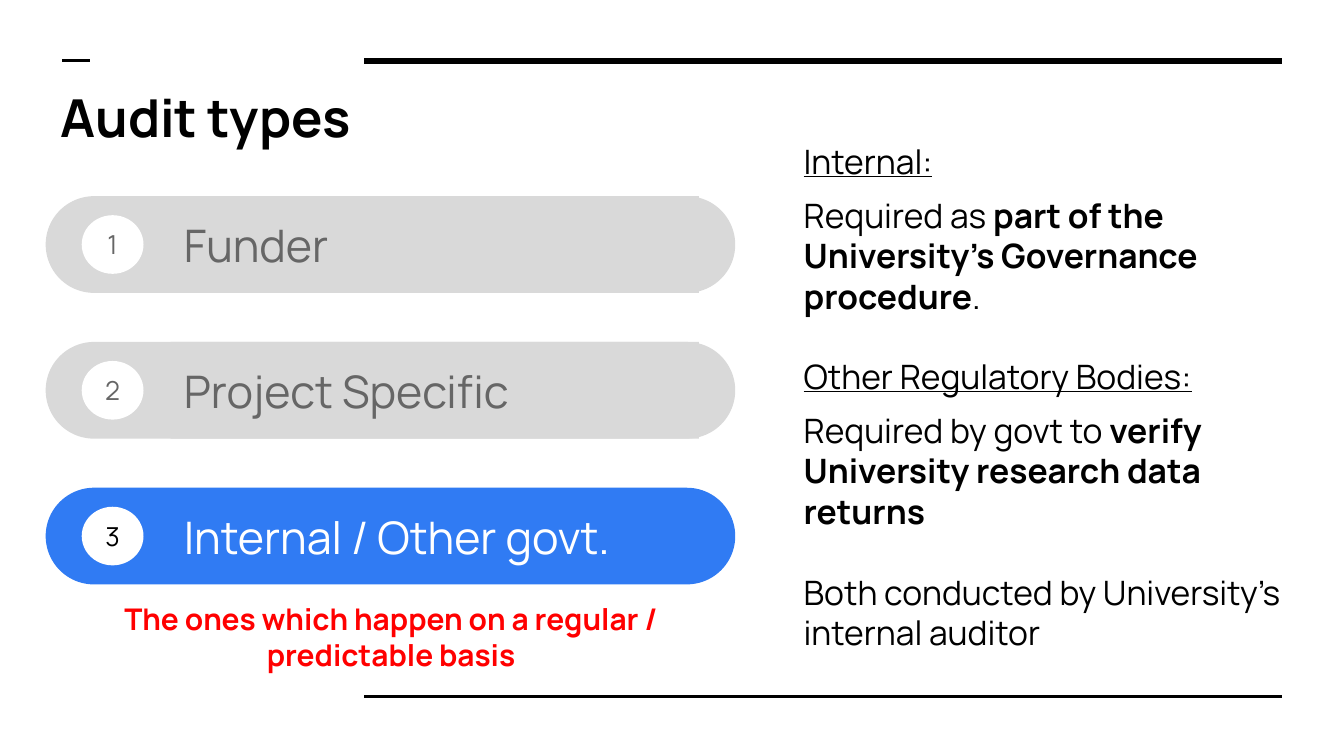
from lxml.etree import SubElement
from pptx import Presentation
from pptx.dml.color import RGBColor
from pptx.enum.shapes import MSO_CONNECTOR, MSO_SHAPE
from pptx.enum.text import MSO_ANCHOR, MSO_AUTO_SIZE, PP_ALIGN
from pptx.oxml.ns import qn
from pptx.util import Pt

FONT = "Manrope"
COLORS = {
    "black": "000000",
    "white": "FFFFFF",
    "grey": "D9D9D9",
    "muted": "666666",
    "blue": "307BF3",
    "red": "FF0000",
}

# Audit types: label, whether it is the highlighted one
AUDIT_TYPES = [("Funder", False), ("Project Specific", False), ("Internal / Other govt.", True)]
ROW_TOP, ROW_PITCH, ROW_HEIGHT = 105.1, 78.1, 51.8

# Explanation: space before, then spans of (text, bold, underline)
EXPLANATION = [
    (0, [("Internal:", False, True)]),
    (7.2, [("Required as ", False, False),
           ("part of the University’s Governance procedure", True, False),
           (".", False, False)]),
    (21.7, [("Other Regulatory Bodies:", False, True)]),
    (7.2, [("Required by govt to ", False, False),
           ("verify University research data returns", True, False)]),
    (21.7, [("Both conducted by University’s internal auditor", False, False)]),
]


def rgb(name):
    return RGBColor.from_string(COLORS[name])


def add_rule(page, left, right, y, weight):
    rule = page.shapes.add_connector(MSO_CONNECTOR.STRAIGHT, Pt(left), Pt(y), Pt(right), Pt(y))
    rule.line.color.rgb = rgb("black")
    rule.line.width = Pt(weight)
    SubElement(rule._element.spPr, qn("a:effectLst"))


def add_block(page, kind, left, top, width, height, fill):
    block = page.shapes.add_shape(kind, Pt(left), Pt(top), Pt(width), Pt(height))
    block.shadow.inherit = False
    block.fill.solid()
    block.fill.fore_color.rgb = rgb(fill)
    block.line.fill.background()
    return block


def add_text_box(page, left, top, width, height):
    return page.shapes.add_textbox(Pt(left), Pt(top), Pt(width), Pt(height))


def set_frame(box, anchor=MSO_ANCHOR.TOP):
    frame = box.text_frame
    frame.word_wrap = True
    frame.auto_size = MSO_AUTO_SIZE.NONE
    frame.vertical_anchor = anchor
    frame.margin_left = frame.margin_right = Pt(7.2)
    frame.margin_top = frame.margin_bottom = Pt(7.2)
    return frame


def add_span(para, text, size, color, bold=False, underline=False):
    span = para.add_run()
    span.text = text
    span.font.name = FONT
    span.font.size = Pt(size)
    span.font.color.rgb = rgb(color)
    span.font.bold = bold
    span.font.underline = underline


def write_line(box, text, size, color, align=PP_ALIGN.LEFT, anchor=MSO_ANCHOR.TOP, bold=False):
    para = set_frame(box, anchor).paragraphs[0]
    para.alignment = align
    add_span(para, text, size, color, bold)


def add_title(page, text):
    title = page.shapes.title
    title.left, title.top, title.width, title.height = Pt(25.2), Pt(38.2), Pt(651.6), Pt(59.8)
    write_line(title, text, 28, "black", bold=True)


def add_audit_type(page, number, label, active):
    top = ROW_TOP + (number - 1) * ROW_PITCH
    fill = "blue" if active else "grey"
    pill = add_block(page, MSO_SHAPE.ROUNDED_RECTANGLE, 24.5, top, 369.4, ROW_HEIGHT, fill)
    pill.adjustments[0] = 0.5

    badge = add_block(page, MSO_SHAPE.OVAL, 43.8, top + 10.2, 33.1, 31.4, "white")
    write_line(badge, str(number), 14, "black" if active else "muted",
               PP_ALIGN.CENTER, MSO_ANCHOR.MIDDLE)

    place = (91.4, top, 283, ROW_HEIGHT)
    if active:
        box = add_text_box(page, *place)
    else:
        box = add_block(page, MSO_SHAPE.RECTANGLE, *place, fill)
    write_line(box, label, 24, "white" if active else "muted", anchor=MSO_ANCHOR.MIDDLE)


def add_explanation(page):
    frame = set_frame(add_text_box(page, 423.4, 68.4, 286.6, 290.9))
    for index, (space, spans) in enumerate(EXPLANATION):
        para = frame.add_paragraph() if index else frame.paragraphs[0]
        para.space_before = Pt(space)
        for text, bold, underline in spans:
            add_span(para, text, 18, "black", bold, underline)


def main():
    deck = Presentation()
    deck.slide_width, deck.slide_height = Pt(720), Pt(405)
    page = deck.slides.add_slide(deck.slide_layouts[5])

    # Frame rules
    add_rule(page, 195.1, 686.9, 32.6, 3)
    add_rule(page, 195.1, 686.9, 373, 1.5)
    add_rule(page, 33.5, 48, 32.6, 1.5)

    add_title(page, "Audit types")

    # Numbered list of types
    for number, (label, active) in enumerate(AUDIT_TYPES, start=1):
        add_audit_type(page, number, label, active)

    # Right-hand text and the note below the list
    add_explanation(page)
    note = add_text_box(page, 25.2, 314.6, 368.6, 51.8)
    write_line(note, "The ones which happen on a regular / predictable basis", 16, "red",
               PP_ALIGN.CENTER, bold=True)

    deck.save("out.pptx")


if __name__ == "__main__":
    main()
